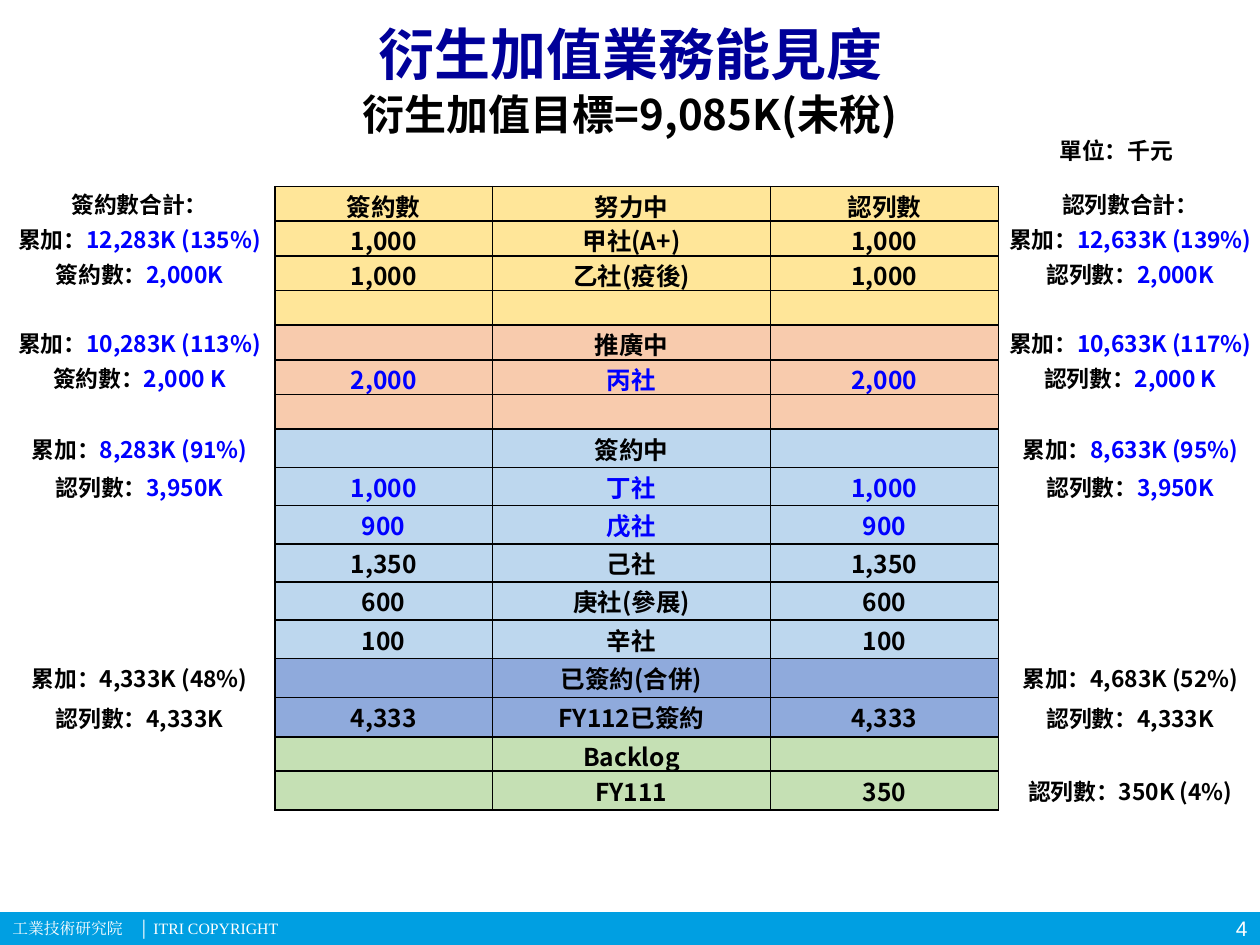
from lxml import etree
from pptx import Presentation
from pptx.dml.color import RGBColor
from pptx.enum.shapes import MSO_SHAPE
from pptx.enum.text import MSO_ANCHOR, PP_ALIGN
from pptx.oxml.ns import qn
from pptx.util import Cm, Pt

LEFT, CENTER, RIGHT = PP_ALIGN.LEFT, PP_ALIGN.CENTER, PP_ALIGN.RIGHT
TOP, MIDDLE = MSO_ANCHOR.TOP, MSO_ANCHOR.MIDDLE
RECTANGLE = MSO_SHAPE.RECTANGLE

COLORS = {
    "black": "000000", "white": "FFFFFF", "blue": "0000FF", "navy": "000099",
    "bar": "009FE2", "effort": "FFE699", "promotion": "F8CBAD",
    "signing": "BDD7EE", "signed": "8FAADC", "backlog": "C5E0B4",
}
SANS, SANS_TC = "Noto Sans CJK SC", "Noto Sans CJK TC"
ARIAL, SERIF = "Arial", "Times New Roman"
SIDE_SIZE, GRID_SIZE = 13, 14
COLUMN_WIDTHS = (5.46, 4.39, 5.6, 4.6, 5.31)

# Group, row height, colour of the middle text, colour of the totals, and five cells
ROWS = [
    ("effort", 0.7, "black", "blue", ("簽約數合計：", "簽約數", "努力中", "認列數", "認列數合計：")),
    ("effort", 0.7, "black", "blue",
     ("累加：12,283K (135%)", "1,000", "甲社(A+)", "1,000", "累加：12,633K (139%)")),
    ("effort", 0.7, "black", "blue",
     ("簽約數：2,000K", "1,000", "乙社(疫後)", "1,000", "認列數：2,000K")),
    ("effort", 0.7, "black", "blue", ("", "", "", "", "")),
    ("promotion", 0.7, "black", "blue",
     ("累加：10,283K (113%)", "", "推廣中", "", "累加：10,633K (117%)")),
    ("promotion", 0.7, "blue", "blue",
     ("簽約數：2,000 K", "2,000", "丙社", "2,000", "認列數：2,000 K")),
    ("promotion", 0.7, "black", "blue", ("", "", "", "", "")),
    ("signing", 0.77, "black", "blue",
     ("累加：8,283K (91%)", "", "簽約中", "", "累加：8,633K (95%)")),
    ("signing", 0.77, "blue", "blue",
     ("認列數：3,950K", "1,000", "丁社", "1,000", "認列數：3,950K")),
    ("signing", 0.77, "blue", "blue", ("", "900", "戊社", "900", "")),
    ("signing", 0.77, "black", "blue", ("", "1,350", "己社", "1,350", "")),
    ("signing", 0.77, "black", "blue", ("", "600", "庚社(參展)", "600", "")),
    ("signing", 0.77, "black", "blue", ("", "100", "辛社", "100", "")),
    ("signed", 0.79, "black", "black",
     ("累加：4,333K (48%)", "", "已簽約(合併)", "", "累加：4,683K (52%)")),
    ("signed", 0.79, "black", "black",
     ("認列數：4,333K", "4,333", "FY112已簽約", "4,333", "認列數：4,333K")),
    ("backlog", 0.69, "black", "black", ("", "", "Backlog", "", "")),
    ("backlog", 0.79, "black", "black", ("", "", "FY111", "350", "認列數：350K (4%)")),
]


def apply(target, values):
    for name, value in values.items():
        setattr(target, name, value)


def rgb(color):
    return RGBColor.from_string(COLORS[color])


class SlideBuilder:
    def __init__(self, slide):
        self.slide = slide

    def run(self, paragraph, text, size, color, font=SANS, bold=True):
        run = paragraph.add_run()
        run.text = text
        apply(run.font, {"size": Pt(size), "bold": bold, "name": font})
        run.font.color.rgb = rgb(color)
        east_asian = etree.SubElement(run.font._element, qn("a:ea"))
        east_asian.set("typeface", font)

    def bar(self, left, top, width, height, color):
        shape = self.slide.shapes.add_shape(
            RECTANGLE, Cm(left), Cm(top), Cm(width), Cm(height))
        shape.shadow.inherit = False
        shape.fill.solid()
        shape.fill.fore_color.rgb = rgb(color)
        shape.line.fill.background()

    def text(self, box, text, size, color, font=SANS, bold=True,
             align=CENTER, anchor=MIDDLE, tab=None):
        shape = self.slide.shapes.add_textbox(*(Cm(length) for length in box))
        apply(shape.text_frame, {"word_wrap": True, "vertical_anchor": anchor})
        paragraph = shape.text_frame.paragraphs[0]
        paragraph.alignment = align
        if tab:
            tabs = etree.SubElement(paragraph._p.get_or_add_pPr(), qn("a:tabLst"))
            etree.SubElement(tabs, qn("a:tab"), pos=str(Cm(tab)), algn="l")
        self.run(paragraph, text, size, color, font, bold)

    def borders(self, cell, visible):
        properties = cell._tc.get_or_add_tcPr()
        for side in "LRTB":
            line = etree.SubElement(properties, qn("a:ln" + side), w=str(Pt(1)))
            if side in visible:
                fill = etree.SubElement(line, qn("a:solidFill"))
                etree.SubElement(fill, qn("a:srgbClr"), val=COLORS["black"])
            else:
                etree.SubElement(line, qn("a:noFill"))

    def cell(self, cell, text, size, colors, fill, visible):
        self.borders(cell, visible)
        cell.fill.solid()
        cell.fill.fore_color.rgb = rgb(fill)
        apply(cell, {"vertical_anchor": MIDDLE,
                     "margin_left": Cm(0.05), "margin_right": Cm(0.05),
                     "margin_top": Cm(0.02), "margin_bottom": Cm(0.02)})
        paragraph = cell.text_frame.paragraphs[0]
        paragraph.alignment = CENTER
        label, colon, value = text.partition("：")
        for part, color in zip((label + colon, value), colors):
            if part:
                self.run(paragraph, part, size, color)
        if not text:
            etree.SubElement(paragraph._p, qn("a:endParaRPr"), sz=str(size * 100))

    def table(self, left, top, widths, rows):
        height = sum(row[1] for row in rows)
        table = self.slide.shapes.add_table(
            len(rows), len(widths), Cm(left), Cm(top), Cm(sum(widths)), Cm(height)).table
        apply(table, {"first_row": False, "horz_banding": False})
        for column, width in zip(table.columns, widths):
            column.width = Cm(width)
        last = len(widths) - 1
        for row_index, (group, row_height, middle, total, texts) in enumerate(rows):
            table.rows[row_index].height = Cm(row_height)
            for index, text in enumerate(texts):
                cell = table.cell(row_index, index)
                if index in (0, last):
                    visible = "L" if index else "R"
                    self.cell(cell, text, SIDE_SIZE, ("black", total), "white", visible)
                else:
                    self.cell(cell, text, GRID_SIZE, (middle, middle), group, "LRTB")


def main():
    presentation = Presentation()
    apply(presentation, {"slide_width": Cm(25.4), "slide_height": Cm(19.05)})
    builder = SlideBuilder(presentation.slides.add_slide(presentation.slide_layouts[6]))

    # Footer
    builder.bar(0, 18.39, 25.4, 0.66, "bar")
    builder.text((23.93, 18.39, 1.47, 0.66), "4", 12, "white", ARIAL, False, RIGHT)
    builder.text((0, 18.39, 22.7, 0.66), "工業技術研究院\t│ ITRI COPYRIGHT", 9, "white",
                 SERIF, False, LEFT, tab=2.54)

    # Forecast table with totals on both sides
    builder.table(0.08, 3.76, COLUMN_WIDTHS, ROWS)

    # Titles and unit
    builder.text((0.03, 0.33, 25.37, 1.47), "衍生加值業務能見度", 32, "navy")
    builder.text((0, 1.65, 25.4, 1.27), "衍生加值目標=9,085K(未稅)", 24, "black", anchor=TOP)
    builder.text((21.11, 2.64, 4.09, 0.81), "單位：千元", 13, "black", SANS_TC,
                 align=LEFT, anchor=TOP)

    presentation.save("out.pptx")


if __name__ == "__main__":
    main()
